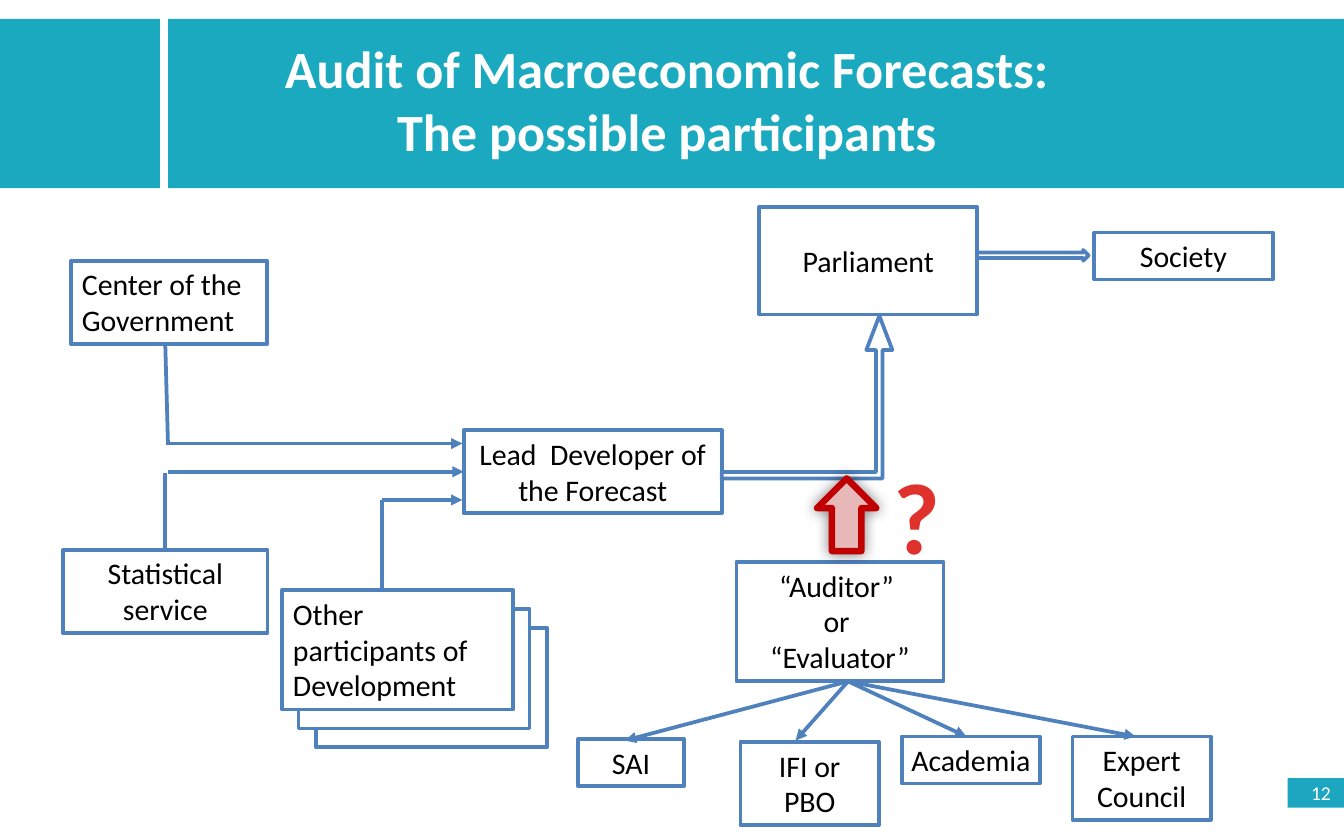
from dataclasses import dataclass
from typing import Optional

from lxml.etree import SubElement
from pptx import Presentation
from pptx.dml.color import RGBColor
from pptx.enum.shapes import MSO_CONNECTOR, MSO_SHAPE
from pptx.enum.text import MSO_ANCHOR, PP_ALIGN
from pptx.oxml.ns import qn
from pptx.util import Inches, Pt

COLORS = {
    "band": "1AA9BF",
    "badge": "1CA6C0",
    "white": "FFFFFF",
    "black": "000000",
    "blue": "4F81BD",
    "pink": "E6B9B8",
    "red": "C00000",
    "question": "E0322D",
}


@dataclass
class Box:
    text: str
    x: float
    y: float
    w: float
    h: float
    align: PP_ALIGN = PP_ALIGN.CENTER
    anchor: MSO_ANCHOR = MSO_ANCHOR.TOP
    side: float = 0.08


@dataclass
class Link:
    x1: float
    y1: float
    x2: float
    y2: float
    arrow: bool = True
    start: Optional[tuple[str, int]] = None
    end: Optional[tuple[str, int]] = None


BOXES = [
    Box("", 2.35, 4.67, 1.72, 0.89),
    Box("", 2.22, 4.53, 1.72, 0.89),
    Box("Center of the Government", 0.53, 1.94, 1.46, 0.62, PP_ALIGN.LEFT),
    Box("Other participants of Development", 2.1, 4.39, 1.72, 0.89, PP_ALIGN.LEFT),
    Box("Lead  Developer of the Forecast", 3.45, 3.2, 1.92, 0.62),
    Box("Parliament", 5.65, 1.54, 1.62, 0.8, anchor=MSO_ANCHOR.MIDDLE),
    Box("Statistical service", 0.47, 4.09, 1.52, 0.62),
    Box("“Auditor” \vor \v“Evaluator”", 5.48, 4.18, 1.54, 0.89),
    Box("Society", 8.14, 1.73, 1.33, 0.35),
    Box("SAI", 4.3, 5.5, 0.79, 0.35),
    Box("IFI or PBO", 5.51, 5.52, 1.03, 0.62),
    Box("Academia", 6.71, 5.48, 1.03, 0.35, side=0),
    Box("Expert Council", 7.98, 5.48, 1.03, 0.62),
]

FAN_START = (6.31, 5.07)
FAN_ENDS = [(4.65, 5.51), (5.92, 5.51), (7.19, 5.48), (8.45, 5.48)]
LINKS = [
    Link(2.84, 4.39, 2.84, 3.72, arrow=False),
    Link(2.84, 3.72, 3.44, 3.72),
    Link(1.23, 4.09, 1.23, 3.52, arrow=False, start=("Statistical service", 0)),
    Link(1.25, 3.51, 3.45, 3.51, end=("Lead  Developer of the Forecast", 1)),
    Link(1.25, 3.3, 3.44, 3.3),
    Link(1.23, 2.57, 1.25, 3.31, arrow=False),
] + [Link(*FAN_START, *end) for end in FAN_ENDS]


def rgb(name: str) -> RGBColor:
    return RGBColor.from_string(COLORS[name])


def write(tf, text: str, size: float = 16, color: str = "black", bold: bool = False,
          align: PP_ALIGN = PP_ALIGN.CENTER, anchor: MSO_ANCHOR = MSO_ANCHOR.TOP,
          side: float = 0.1, edge: float = 0.05, wrap: bool = True) -> None:
    tf.text = text
    tf.word_wrap = wrap
    tf.vertical_anchor = anchor
    tf.margin_left = tf.margin_right = Inches(side)
    tf.margin_top = tf.margin_bottom = Inches(edge)
    for p in tf.paragraphs:
        p.alignment = align
        for r in p.runs:
            r.font.name = "Calibri"
            r.font.size = Pt(size)
            r.font.bold = bold
            r.font.color.rgb = rgb(color)


def add_shape(s, kind: MSO_SHAPE, x: float, y: float, w: float, h: float,
              fill: str = "white", line: Optional[str] = "blue", width: float = 2,
              adjustments: tuple = ()):
    sp = s.shapes.add_shape(kind, Inches(x), Inches(y), Inches(w), Inches(h))
    sp.shadow.inherit = False
    sp.fill.solid()
    sp.fill.fore_color.rgb = rgb(fill)
    if line:
        sp.line.color.rgb = rgb(line)
        sp.line.width = Pt(width)
    else:
        sp.line.fill.background()
    for i, value in enumerate(adjustments):
        sp.adjustments[i] = value
    return sp


def add_box(s, box: Box):
    sp = add_shape(s, MSO_SHAPE.RECTANGLE, box.x, box.y, box.w, box.h)
    if box.text:
        write(sp.text_frame, box.text, align=box.align, anchor=box.anchor,
              side=box.side, edge=0.04)
    return sp


def add_link(s, link: Link, shapes: dict) -> None:
    cn = s.shapes.add_connector(MSO_CONNECTOR.STRAIGHT, Inches(link.x1), Inches(link.y1),
                                Inches(link.x2), Inches(link.y2))
    cn.line.color.rgb = rgb("blue")
    cn.line.width = Pt(2)
    if link.arrow:
        SubElement(cn.line._get_or_add_ln(), qn("a:tailEnd"), type="triangle")
    SubElement(cn._element.spPr, qn("a:effectLst"))
    if link.start:
        cn.begin_connect(shapes[link.start[0]], link.start[1])
    if link.end:
        cn.end_connect(shapes[link.end[0]], link.end[1])


def add_glow_shadow(sp) -> None:
    effects = sp._element.spPr.find(qn("a:effectLst"))
    shadow = SubElement(effects, qn("a:outerShdw"), blurRad=str(Pt(7.5)), dist="0",
                        dir="0", algn="ctr", rotWithShape="0")
    color = SubElement(shadow, qn("a:srgbClr"), val=COLORS["black"])
    SubElement(color, qn("a:alpha"), val="50000")


def main() -> None:
    prs = Presentation()
    prs.slide_width, prs.slide_height = Inches(10), Inches(6.25)
    s = prs.slides.add_slide(prs.slide_layouts[5])

    for x, w in ((1.25, 8.75), (0, 1.19)):
        add_shape(s, MSO_SHAPE.RECTANGLE, x, 0.14, w, 1.26, fill="band", line=None)
    badge = add_shape(s, MSO_SHAPE.RECTANGLE, 9.58, 5.79, 0.42, 0.22, fill="badge", line=None)
    write(badge.text_frame, "12", size=10.5, color="white", align=PP_ALIGN.RIGHT,
          anchor=MSO_ANCHOR.MIDDLE)

    shapes = {box.text: add_box(s, box) for box in BOXES}
    for link in LINKS:
        add_link(s, link, shapes)

    add_shape(s, MSO_SHAPE.BENT_UP_ARROW, 5.37, 2.35, 1.27, 1.21,
              adjustments=(0.04, 0.08, 0.21))
    add_shape(s, MSO_SHAPE.RIGHT_ARROW, 7.27, 1.86, 0.83, 0.08)

    title = s.shapes.title
    title.left, title.top = Inches(1.32), Inches(0.22)
    title.width, title.height = Inches(7.28), Inches(1.04)
    write(title.text_frame, "Audit of Macroeconomic Forecasts:\nThe possible participants",
          size=28, color="white", bold=True)
    s.shapes._spTree.append(title._element)

    audit = add_shape(s, MSO_SHAPE.RIGHT_ARROW, 6.03, 3.61, 0.54, 0.44,
                      fill="pink", line="red", width=3.5)
    audit.rotation = 270
    add_glow_shadow(audit)

    question = s.shapes.add_textbox(Inches(6.54), Inches(3.33), Inches(0.56), Inches(1.01))
    write(question.text_frame, "?", size=54, color="question", bold=True, wrap=False)

    prs.save("out.pptx")


if __name__ == "__main__":
    main()
